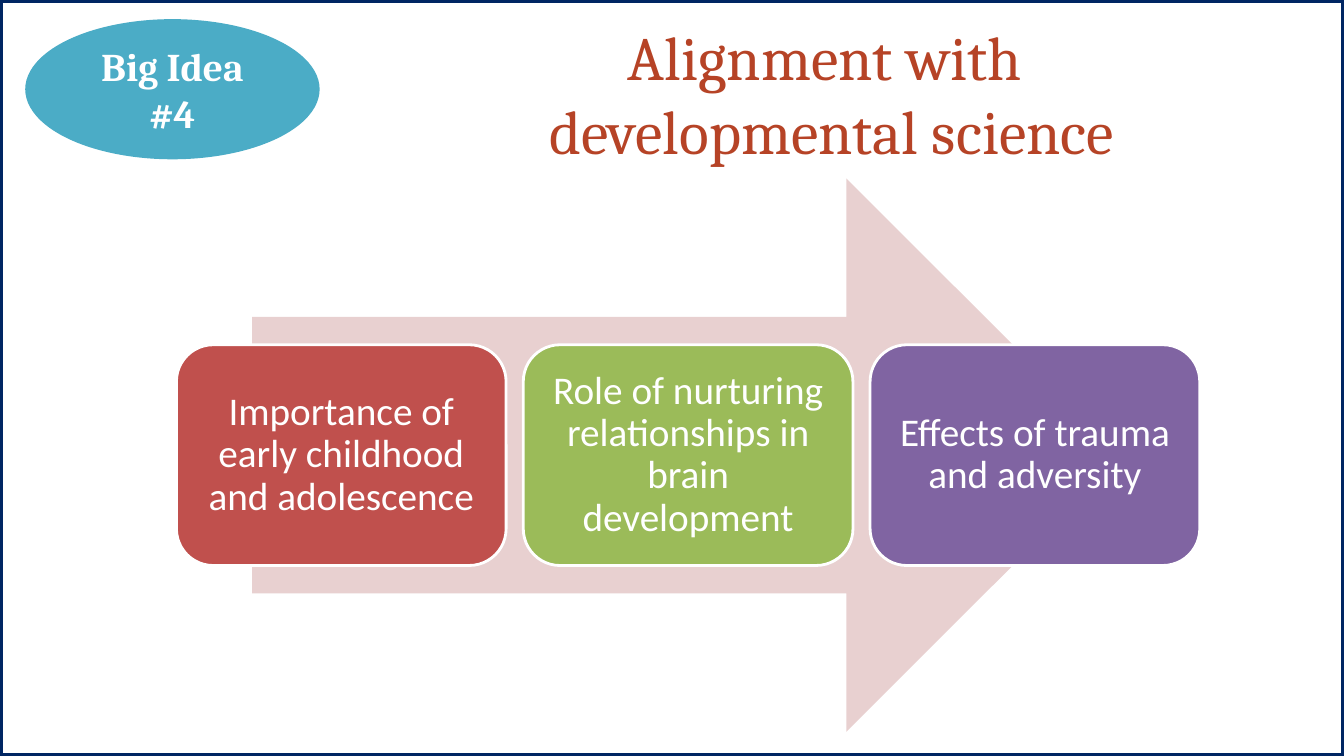
from dataclasses import dataclass

from pptx import Presentation
from pptx.dml.color import RGBColor
from pptx.enum.shapes import MSO_SHAPE
from pptx.enum.text import MSO_ANCHOR, PP_ALIGN
from pptx.shapes.autoshape import Shape
from pptx.slide import Slide
from pptx.util import Inches, Pt


@dataclass(frozen=True)
class Theme:
    border: str = "002663"
    title: str = "B64326"
    arrow: str = "E8D0D0"
    badge: str = "4BACC6"
    white: str = "FFFFFF"
    heading_font: str = "Cambria"
    body_font: str = "Calibri"
    title_size: int = 44
    body_size: int = 28


@dataclass(frozen=True)
class Box:
    left: float
    top: float
    width: float
    height: float


@dataclass(frozen=True)
class Card:
    text: str
    fill: str


THEME = Theme()
SLIDE = Box(0, 0, 13.33, 7.5)
FIRST_CARD = Box(1.75, 3.42, 3.27, 2.19)
CARD_PITCH = 3.44
CARD_INSET = 0.12
CARDS = [
    Card("Importance of early childhood and adolescence", "C0504D"),
    Card("Role of nurturing relationships in brain development", "9BBB59"),
    Card("Effects of trauma and adversity", "8064A2"),
]


def add_shape(s: Slide, kind: MSO_SHAPE, box: Box, fill: str | None = None,
              line: str | None = None, line_width: float = 0) -> Shape:
    sp = s.shapes.add_shape(kind, Inches(box.left), Inches(box.top),
                            Inches(box.width), Inches(box.height))
    sp.shadow.inherit = False
    if fill:
        sp.fill.solid()
        sp.fill.fore_color.rgb = RGBColor.from_string(fill)
    else:
        sp.fill.background()
    if line:
        sp.line.color.rgb = RGBColor.from_string(line)
        sp.line.width = Pt(line_width)
    else:
        sp.line.fill.background()
    return sp


def set_text(sp: Shape, text: str, font: str, size: int, color: str,
             bold: bool = False) -> None:
    tf = sp.text_frame
    tf.word_wrap = True
    tf.vertical_anchor = MSO_ANCHOR.MIDDLE
    p = tf.paragraphs[0]
    p.text = text
    p.alignment = PP_ALIGN.CENTER
    for r in p.runs:
        r.font.name = font
        r.font.size = Pt(size)
        r.font.bold = bold
        r.font.color.rgb = RGBColor.from_string(color)


def add_card(s: Slide, card: Card, box: Box) -> None:
    sp = add_shape(s, MSO_SHAPE.ROUNDED_RECTANGLE, box, card.fill, THEME.white, 2)
    set_text(sp, card.text, THEME.body_font, THEME.body_size, THEME.white)
    tf = sp.text_frame
    tf.margin_left = tf.margin_right = Inches(CARD_INSET)
    tf.margin_top = tf.margin_bottom = Inches(CARD_INSET)
    tf.paragraphs[0].line_spacing = 0.9


def main() -> None:
    prs = Presentation()
    prs.slide_width = Inches(SLIDE.width)
    prs.slide_height = Inches(SLIDE.height)
    s = prs.slides.add_slide(prs.slide_layouts[6])

    # Slide border
    add_shape(s, MSO_SHAPE.RECTANGLE, SLIDE, line=THEME.border, line_width=4.5)

    # Title, broken over two lines
    title = s.shapes.add_textbox(Inches(3.32), Inches(0.3), Inches(9.86), Inches(1.25))
    set_text(title, "Alignment with \vdevelopmental science",
             THEME.heading_font, THEME.title_size, THEME.title)

    # Arrow behind the cards
    add_shape(s, MSO_SHAPE.RIGHT_ARROW, Box(2.5, 1.77, 8.64, 5.49), THEME.arrow)

    # Row of cards
    for i, card in enumerate(CARDS):
        add_card(s, card, Box(FIRST_CARD.left + i * CARD_PITCH, FIRST_CARD.top,
                              FIRST_CARD.width, FIRST_CARD.height))

    # Big idea badge
    badge = add_shape(s, MSO_SHAPE.OVAL, Box(0.25, 0.19, 2.92, 1.39), THEME.badge)
    set_text(badge, "Big Idea #4", THEME.heading_font, THEME.body_size,
             THEME.white, bold=True)

    prs.save("out.pptx")


if __name__ == "__main__":
    main()
